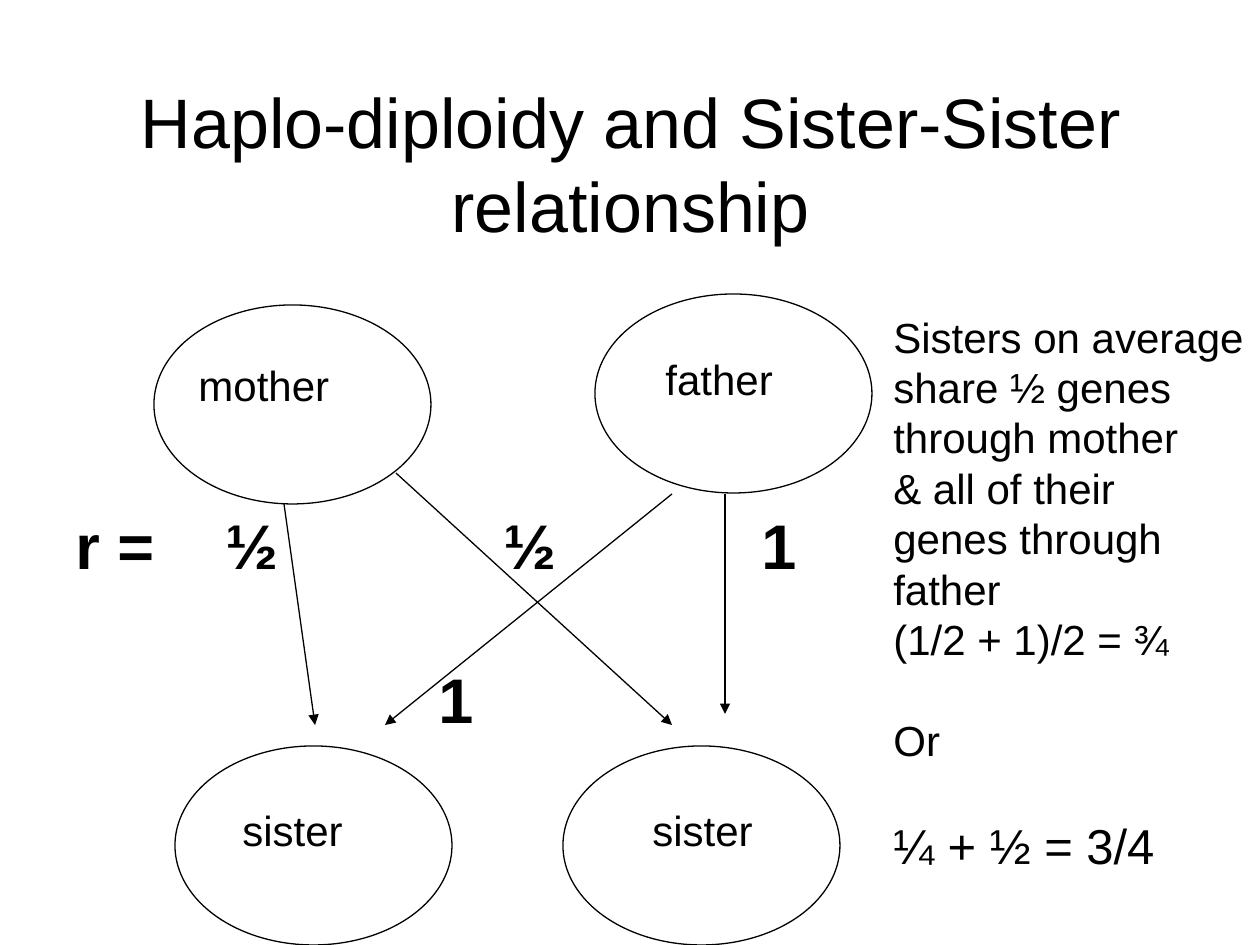
from pptx import Presentation
from pptx import util as u
from pptx.dml.color import RGBColor
from pptx.enum import shapes, text
from pptx.oxml.ns import qn
from lxml import etree

PX = u.Inches(1) / 126
BLACK = "000000"
OVAL_W, OVAL_H = 277, 199
LABEL_H = 64


def px(*lengths):
    return [u.Emu(round(n * PX)) for n in lengths]


def color(value):
    return RGBColor.from_string(value)


def style_line(shape):
    shape.line.color.rgb = color(BLACK)
    shape.line.width = u.Pt(0.75)


def write(tf, lines, size, bold=False):
    """Fill a frame with (text, paragraph format, size) lines."""
    for i, (words, layout, own_size) in enumerate(lines):
        p = tf.paragraphs[0] if i == 0 else tf.add_paragraph()
        for key, value in layout.items():
            setattr(p, key, value)
        r = p.add_run()
        r.text = words
        font = {"name": "Arial", "size": u.Pt(own_size or size), "bold": bold}
        for key, value in font.items():
            setattr(r.font, key, value)
        r.font.color.rgb = color(BLACK)


def add_text(s, box, lines, size, bold=False, wrap=False):
    tf = s.shapes.add_textbox(*px(*box)).text_frame
    tf.word_wrap = wrap
    write(tf, lines, size, bold)
    return tf


def add_title(s, box, words):
    sp = s.shapes.title
    sp.left, sp.top, sp.width, sp.height = px(*box)
    tf = sp.text_frame
    for key, value in {"word_wrap": True, "vertical_anchor": text.MSO_ANCHOR.MIDDLE,
                       "auto_size": text.MSO_AUTO_SIZE.NONE}.items():
        setattr(tf, key, value)
    write(tf, [(words, {"alignment": text.PP_ALIGN.CENTER}, None)], 40)


def add_member(s, left, top, name, dx, dy, width):
    """One family member: an oval with its name at an offset inside."""
    sp = s.shapes.add_shape(shapes.MSO_SHAPE.OVAL, *px(left, top, OVAL_W, OVAL_H))
    sp.shadow.inherit = False
    sp.fill.background()
    style_line(sp)
    add_text(s, (left + dx, top + dy, width, LABEL_H), [(name, {}, None)], 24)


def add_arrow(s, *ends):
    line = s.shapes.add_connector(shapes.MSO_CONNECTOR.STRAIGHT, *px(*ends))
    style_line(line)
    etree.SubElement(line.line._get_or_add_ln(), qn("a:tailEnd"), type="triangle")
    etree.SubElement(line._element.spPr, qn("a:effectLst"))


def add_family(s, left, top):
    """Parents above, sisters below, arrows for inheritance."""
    for x, y, *label in [(0, 11, "mother", 32, 48, 157), (441, 0, "father", 58, 53, 134),
                         (21, 452, "sister", 55, 52, 127), (409, 452, "sister", 77, 52, 127)]:
        add_member(s, left + x, top + y, *label)
    for x1, y1, x2, y2 in [(518, 200, 231, 431), (571, 200, 571, 420),
                           (130, 210, 161, 431), (242, 179, 518, 431)]:
        add_arrow(s, left + x1, top + y1, left + x2, top + y2)


def add_shares(s, box, stops, indent):
    """Shares of genes beside the arrows, set on tab stops."""
    tf = add_text(s, box, [("r =\t½\t½\t1", {}, None),
                           ("1", {"space_before": u.Pt(45)}, None)], 36, True, True)
    first, second = [p._p.get_or_add_pPr() for p in tf.paragraphs]
    tabs = etree.SubElement(first, qn("a:tabLst"))
    for stop in px(*stops):
        etree.SubElement(tabs, qn("a:tab"), pos=str(stop), algn="l")
    second.set("marL", str(px(indent)[0]))
    second.set("indent", "0")


def add_explanation(s, box):
    gap = {"space_before": u.Pt(28.8)}
    lines = [(words, {}, None) for words in
             ("Sisters on average", "share ½ genes", "through mother", "& all of their",
              "genes through", "father", "(1/2 + 1)/2 = ¾")]
    add_text(s, box, lines + [("Or", gap, None), ("¼ + ½ = 3/4", gap, 28)], 24)


def main():
    prs = Presentation()
    prs.slide_width, prs.slide_height = u.Inches(10), u.Inches(7.5)
    s = prs.slides.add_slide(prs.slide_layouts[5])
    add_title(s, (95, 84, 1071, 158), "Haplo-diploidy and Sister-Sister relationship")
    add_family(s, 154, 294)
    add_shares(s, (63, 500, 777, 165), (150, 428, 686), 363)
    add_explanation(s, (881, 305, 379, 581))
    prs.save("out.pptx")


if __name__ == "__main__":
    main()
